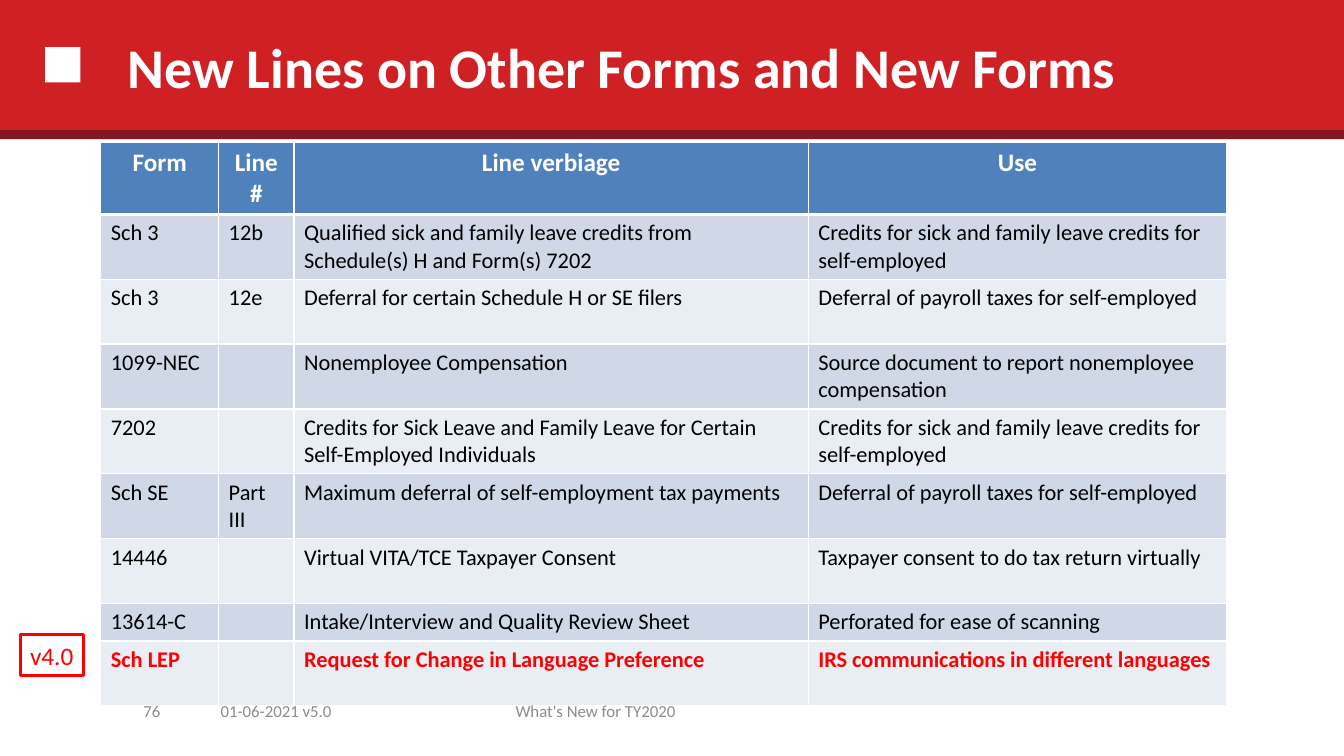
from dataclasses import dataclass

from lxml import etree
from pptx import Presentation
from pptx import util as u
from pptx.dml import color
from pptx.enum import shapes, text
from pptx.oxml import ns

Cm, Pt = u.Cm, u.Pt
ALIGN, ANCHOR = text.PP_ALIGN, text.MSO_ANCHOR


@dataclass(frozen=True)
class Theme:
    font: str = "Calibri"
    white: str = "FFFFFF"
    black: str = "000000"
    banner: str = "CF2124"
    stripe: str = "841721"
    head: str = "4F81BD"
    odd: str = "D0D8E8"
    even: str = "E9EDF4"
    alert: str = "FF0000"
    grey: str = "8C8C8C"
    title: int = 40
    large: int = 18
    body: int = 16
    small: int = 12


T = Theme()
WIDTH, HEIGHT = 33.87, 19.05

HEADS = ("Form", "Line #", "Line verbiage", "Use")
ROWS = (
    ("Sch 3", "12b",
     "Qualified sick and family leave credits from Schedule(s) H and Form(s) 7202",
     "Credits for sick and family leave credits for self-employed"),
    ("Sch 3", "12e", "Deferral for certain Schedule H or SE filers",
     "Deferral of payroll taxes for self-employed"),
    ("1099-NEC", "", "Nonemployee Compensation",
     "Source document to report nonemployee compensation"),
    ("7202", "",
     "Credits for Sick Leave and Family Leave for Certain Self-Employed Individuals",
     "Credits for sick and family leave credits for self-employed"),
    ("Sch SE", "Part III", "Maximum deferral of self-employment tax payments",
     "Deferral of payroll taxes for self-employed"),
    ("14446", "", "Virtual VITA/TCE Taxpayer Consent",
     "Taxpayer consent to do tax return virtually"),
    ("13614-C", "", "Intake/Interview and Quality Review Sheet",
     "Perforated for ease of scanning"),
    ("Sch LEP", "", "Request for Change in Language Preference",
     "IRS communications in different languages"),
)
COLS = (2.97, 1.9, 12.96, 10.54)
TALL, SHORT, TOP = 1.63, 0.92, 1.7
SHORT_ROW = 7


def rgb(code):
    return color.RGBColor.from_string(code)


def style(par, size, ink, bold=False, align=ALIGN.LEFT):
    par.alignment = align
    for run in par.runs:
        font = run.font
        font.name, font.size, font.bold = T.font, Pt(size), bold
        font.color.rgb = rgb(ink)


def add_box(slide, x, y, w, h, fill=None, line=None):
    box = slide.shapes.add_shape(
        shapes.MSO_SHAPE.RECTANGLE, Cm(x), Cm(y), Cm(w), Cm(h))
    box.shadow.inherit = False
    if fill:
        box.fill.solid()
        box.fill.fore_color.rgb = rgb(fill)
    else:
        box.fill.background()
    if line:
        box.line.color.rgb = rgb(line)
        box.line.width = Pt(2.25)
    else:
        box.line.fill.background()
    return box


def add_label(slide, words, x, y, w, h, size, ink, bold=False, align=ALIGN.LEFT):
    box = slide.shapes.add_textbox(Cm(x), Cm(y), Cm(w), Cm(h))
    frame = box.text_frame
    frame.word_wrap = True
    frame.vertical_anchor = ANCHOR.MIDDLE
    frame.text = words
    style(frame.paragraphs[0], size, ink, bold, align)


def set_edges(cell, top, base):
    props = cell._tc.get_or_add_tcPr()
    widths = {"lnL": 1, "lnR": 1, "lnT": top, "lnB": base}
    for spot, (tag, width) in enumerate(widths.items()):
        edge = etree.Element(ns.qn("a:" + tag), w=str(Pt(width)))
        fill = etree.SubElement(edge, ns.qn("a:solidFill"))
        etree.SubElement(fill, ns.qn("a:srgbClr"), val=T.white)
        props.insert(spot, edge)


def fill_cell(cell, words, fill, size, ink, bold, align):
    cell.fill.solid()
    cell.fill.fore_color.rgb = rgb(fill)
    cell.text = words
    par = cell.text_frame.paragraphs[0]
    style(par, size, ink, bold, align)
    if not words:  # keep the empty line as low as its row
        etree.SubElement(par._p, ns.qn("a:endParaRPr"), sz=str(size * 100))


def add_grid(slide):
    lines = (HEADS,) + ROWS
    highs = [TALL] * len(lines)
    highs[0], highs[SHORT_ROW] = TOP, SHORT
    grid = slide.shapes.add_table(
        len(lines), len(COLS), Cm(2.54), Cm(3.6), Cm(sum(COLS)), Cm(sum(highs))).table
    for col, width in zip(grid.columns, COLS):
        col.width = Cm(width)
    for r, line in enumerate(lines):
        grid.rows[r].height = Cm(highs[r])
        if r == 0:
            look = (T.head, T.large, T.white, True, ALIGN.CENTER)
        else:
            last = r == len(ROWS)
            look = (T.odd if r % 2 else T.even, T.body,
                    T.alert if last else T.black, last, ALIGN.LEFT)
        for c, words in enumerate(line):
            cell = grid.cell(r, c)
            fill_cell(cell, words, *look)
            set_edges(cell, 3 if r == 1 else 1, 3 if r == 0 else 1)


def add_tag(slide, words):
    tag = add_box(slide, 0.51, 16, 1.6, 1.02, line=T.alert)
    frame = tag.text_frame
    frame.word_wrap = False
    frame.text = words
    style(frame.paragraphs[0], T.large, T.alert)


def main():
    deck = Presentation()
    deck.slide_width, deck.slide_height = Cm(WIDTH), Cm(HEIGHT)
    slide = deck.slides.add_slide(deck.slide_layouts[6])

    # Banner
    add_box(slide, 0, -0.03, WIDTH, 3.38, T.banner)
    add_box(slide, 1.14, 1.19, 0.89, 0.89, T.white)
    add_box(slide, 0, 3.28, WIDTH, 0.23, T.stripe)

    # Table of forms
    add_grid(slide)

    # Title
    add_label(slide, "New Lines on Other Forms and New Forms",
              2.97, 0.08, 27.08, 3.18, T.title, T.white, True)

    # Footer
    for words, x, w, align in (
            ("What's New for TY2020", 9.65, 10.72, ALIGN.CENTER),
            ("76", 1.7, 2.59, ALIGN.RIGHT),
            ("01-06-2021 v5.0", 5.31, 3.71, ALIGN.LEFT)):
        add_label(slide, words, x, 17.4, w, 1.02, T.small, T.grey, align=align)

    # Version tag
    add_tag(slide, "v4.0")

    deck.save("out.pptx")


if __name__ == "__main__":
    main()
